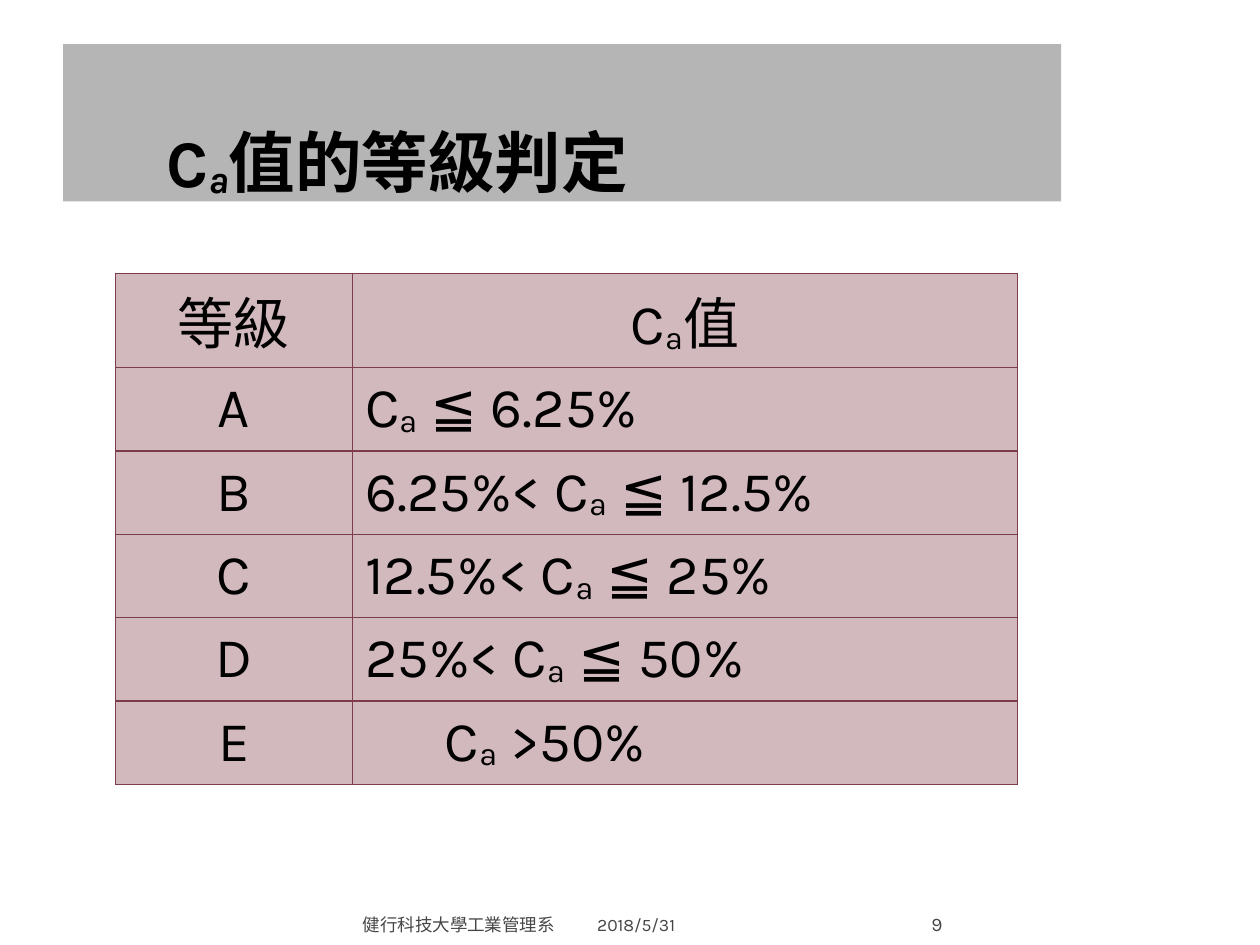
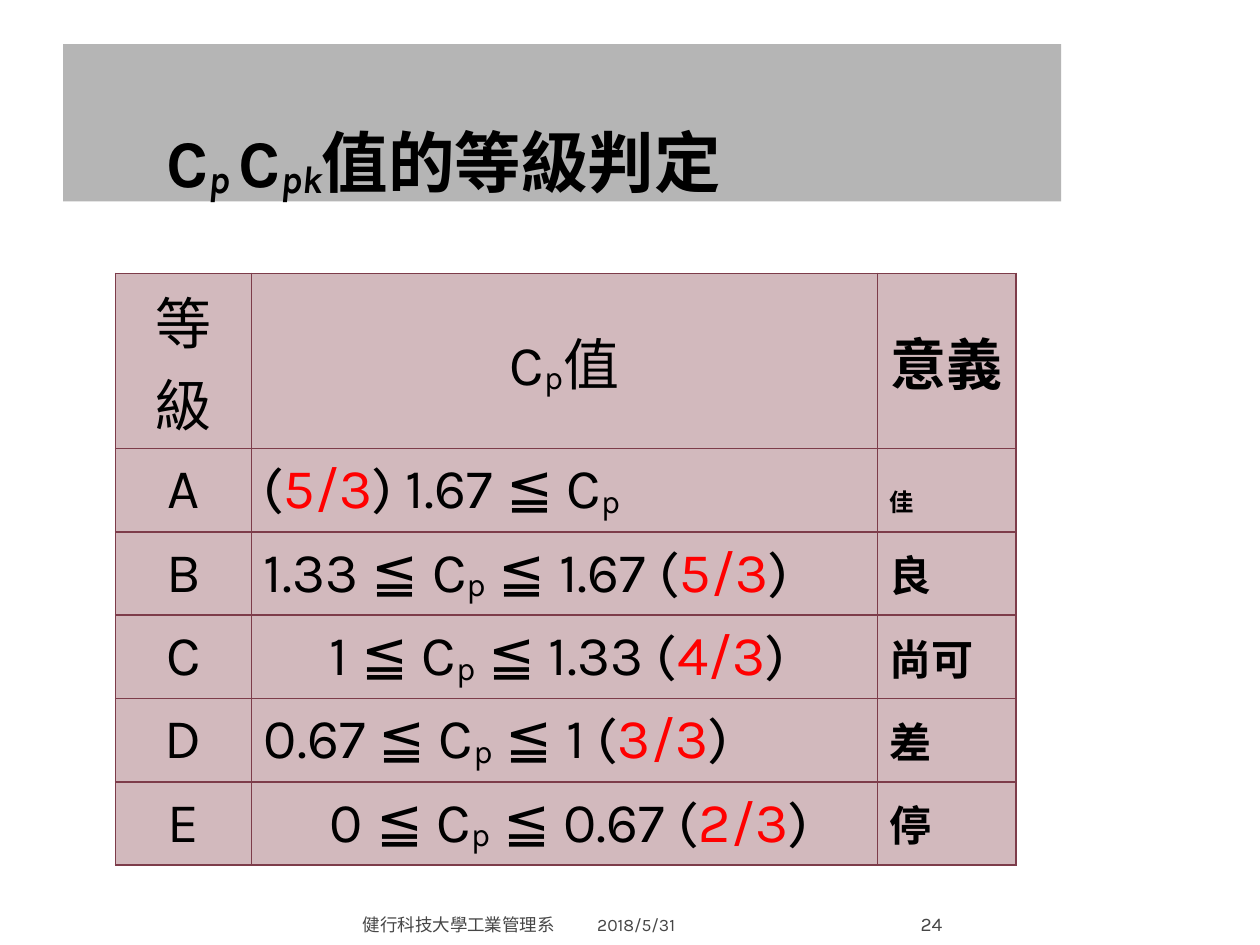
"""Build two slides that grade process capability values in tables."""
from dataclasses import dataclass
from typing import NamedTuple

from lxml.etree import SubElement
from pptx import Presentation
from pptx.dml.color import RGBColor
from pptx.enum.text import MSO_ANCHOR as Anchor, MSO_AUTO_SIZE as AutoSize, PP_ALIGN as Align
from pptx.oxml.ns import qn
from pptx.util import Cm, Pt

BLACK, RED, GREY = "000000", "FF0000", "464646"
BAND, CELL, BORDER = "B5B5B5", "D2B9BD", "7D3C4A"
LATIN, CJK, ACCENT = "Karla", "Noto Sans CJK TC", "Comic Neue"
CELL_MARGIN = 0.25


class Run(NamedTuple):
    text: str
    base: int = 0
    color: str = BLACK
    size: float = 32
    font: str = LATIN
    bold: bool = False
    italic: bool = False


class Entry(NamedTuple):
    runs: list[Run]
    centred: bool = False
    indent: float = 0


class Footer(NamedTuple):
    left: float
    width: float
    align: Align
    size: float
    margin: float


@dataclass
class GradeSlide:
    title: list[Run]
    columns: list[float]
    header_height: float
    rows: list[list[Entry]]
    number: str


FOOTERS = [
    Footer(11.79, 5.56, Align.LEFT, 10, 0.25),
    Footer(1.27, 10.16, Align.RIGHT, 10, 0.25),
    Footer(17.37, 1.63, Align.RIGHT, 11, 0),
]


def rgb(value: str) -> RGBColor:
    return RGBColor.from_string(value)


def heading(text: str) -> Run:
    return Run(text, size=38, bold=True)


def heading_sub(text: str) -> Run:
    return Run(text, base=-10, size=38, bold=True, italic=True)


def sub(text: str) -> Run:
    return Run(text, base=-8)


def head(*runs: Run) -> Entry:
    return Entry(list(runs), centred=True)


def ca_row(grade: str, before: str, after: str, indent: float = 0) -> list[Entry]:
    return [head(Run(grade)), Entry([Run(before + "C"), sub("a"), Run(after)], indent=indent)]


def cp_row(grade: str, low: str, high: str, ratio: str, meaning: str,
           indent: float = 0) -> list[Entry]:
    runs = [Run(f"{low} ≦ C"), sub("p"), Run(f" ≦ {high} ("), Run(ratio, color=RED), Run(")")]
    return [head(Run(grade)), Entry(runs, indent=indent), meaning_entry(meaning)]


def meaning_entry(text: str, base: int = 0) -> Entry:
    return Entry([Run(text, base, size=24, font=CJK, bold=True)])


def add_runs(p, runs: list[Run]) -> None:
    for item in runs:
        r = p.add_run()
        r.text = item.text
        font = r.font
        font.name, font.size = item.font, Pt(item.size)
        font.bold, font.italic = item.bold, item.italic
        font.color.rgb = rgb(item.color)
        rPr = r._r.get_or_add_rPr()
        if item.base:
            rPr.set("baseline", str(item.base * 1000))
        SubElement(rPr, qn("a:ea")).set("typeface", CJK)


def add_title(slide, runs: list[Run]) -> None:
    sp = slide.shapes.title
    sp.left, sp.top, sp.width, sp.height = Cm(1.27), Cm(0.89), Cm(20.12), Cm(3.17)
    sp.fill.solid()
    sp.fill.fore_color.rgb = rgb(BAND)
    sp.line.fill.background()
    tf = sp.text_frame
    tf.auto_size, tf.word_wrap = AutoSize.NONE, True
    tf.vertical_anchor = Anchor.BOTTOM
    tf.margin_left, tf.margin_right = Cm(2.08), Cm(0.13)
    tf.margin_top = tf.margin_bottom = 0
    p = tf.paragraphs[0]
    p.alignment = Align.LEFT
    add_runs(p, runs)


def add_borders(cell) -> None:
    tcPr = cell._tc.get_or_add_tcPr()
    for i, side in enumerate("LRTB"):
        ln = SubElement(tcPr, qn(f"a:ln{side}"), w=str(Pt(0.9)))
        fill = SubElement(ln, qn("a:solidFill"))
        SubElement(fill, qn("a:srgbClr"), val=BORDER)
        tcPr.insert(i, ln)


def fill_cell(cell, entry: Entry) -> None:
    cell.fill.solid()
    cell.fill.fore_color.rgb = rgb(CELL)
    add_borders(cell)
    cell.vertical_anchor = Anchor.MIDDLE
    cell.margin_left = Cm(CELL_MARGIN + entry.indent)
    p = cell.text_frame.paragraphs[0]
    p.alignment = Align.CENTER if entry.centred else Align.LEFT
    add_runs(p, entry.runs)


def add_grades(slide, content: GradeSlide) -> None:
    heights = [content.header_height] + [1.68] * (len(content.rows) - 1)
    frame = slide.shapes.add_table(
        len(heights), len(content.columns), Cm(2.33), Cm(5.51),
        Cm(sum(content.columns)), Cm(sum(heights)))
    table = frame.table
    table.first_row = table.horz_banding = False
    for column, width in zip(table.columns, content.columns):
        column.width = Cm(width)
    for row, height, entries in zip(table.rows, heights, content.rows):
        row.height = Cm(height)
        for cell, entry in zip(row.cells, entries):
            fill_cell(cell, entry)


def add_footer(slide, footer: Footer, text: str) -> None:
    sp = slide.shapes.add_textbox(Cm(footer.left), Cm(18.21), Cm(footer.width), Cm(0.64))
    tf = sp.text_frame
    tf.word_wrap = True
    tf.vertical_anchor = Anchor.BOTTOM
    tf.margin_left = tf.margin_right = Cm(footer.margin)
    tf.margin_top = tf.margin_bottom = 0
    p = tf.paragraphs[0]
    p.alignment = footer.align
    add_runs(p, [Run(text, color=GREY, size=footer.size)])


def add_slide(prs, content: GradeSlide) -> None:
    slide = prs.slides.add_slide(prs.slide_layouts[5])
    add_title(slide, content.title)
    add_grades(slide, content)
    for footer, text in zip(FOOTERS, ["2018/5/31", "健行科技大學工業管理系", content.number]):
        add_footer(slide, footer, text)


CA_SLIDE = GradeSlide(
    title=[heading("C"), heading_sub("a"), heading("值的等級判定")],
    columns=[4.78, 13.4],
    header_height=1.9,
    rows=[
        [head(Run("等級")), head(Run("C"), sub("a"), Run("值"))],
        ca_row("A", "", " ≦ 6.25%"),
        ca_row("B", "6.25%< ", " ≦ 12.5%"),
        ca_row("C", "12.5%< ", " ≦ 25%"),
        ca_row("D", "25%< ", " ≦ 50%"),
        ca_row("E", "", " >50%", indent=1.61),
    ],
    number="9",
)

CP_SLIDE = GradeSlide(
    title=[heading("C"), heading_sub("p "), heading("C"), heading_sub("pk"),
           heading("值的等級判定")],
    columns=[2.74, 12.62, 2.79],
    header_height=3.53,
    rows=[
        [head(Run("等級")), head(Run("C"), sub("p"), Run("值")),
         head(Run("意義", font=ACCENT, bold=True))],
        [head(Run("A")),
         Entry([Run("("), Run("5/3", color=RED), Run(") 1.67 ≦ C"), sub("p")]),
         meaning_entry("佳", base=-8)],
        cp_row("B", "1.33", "1.67", "5/3", "良"),
        cp_row("C", "1", "1.33", "4/3", "尚可", indent=1.33),
        cp_row("D", "0.67", "1", "3/3", "差"),
        cp_row("E", "0", "0.67", "2/3", "停", indent=1.33),
    ],
    number="24",
)


def main() -> None:
    prs = Presentation()
    prs.slide_width, prs.slide_height = Cm(25.4), Cm(19.05)
    for content in (CA_SLIDE, CP_SLIDE):
        add_slide(prs, content)
    prs.save("out.pptx")


if __name__ == "__main__":
    main()
